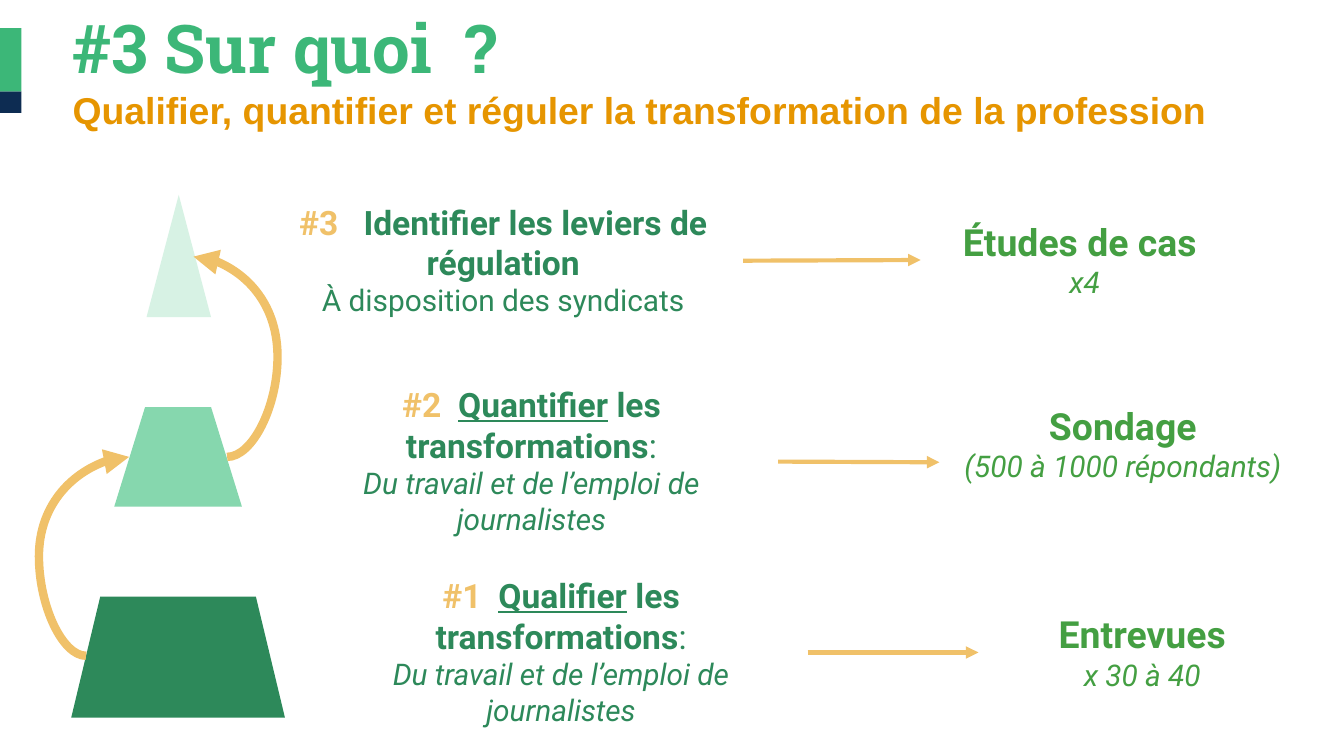
from lxml import etree
from pptx import Presentation
from pptx.dml.color import RGBColor
from pptx.enum.shapes import MSO_CONNECTOR as CONNECTOR, MSO_SHAPE as SHAPE
from pptx.enum.text import MSO_ANCHOR as ANCHOR, MSO_AUTO_SIZE as AUTO_SIZE, PP_ALIGN as ALIGN
from pptx.oxml.ns import qn
from pptx.util import Inches, Pt

COLORS = {
    "navy": "0D2C52", "green": "3CB778", "pale": "D7F2E4", "mint": "86D7AE",
    "forest": "2D895A", "leaf": "449F42", "sand": "F0C169", "orange": "E69500",
}


def add_run(paragraph, text, color, size, font="Roboto", **formats):
    run = paragraph.add_run()
    run.text = text
    run.font.color.rgb = RGBColor.from_string(COLORS[color])
    for name, value in {"name": font, "size": Pt(size), **formats}.items():
        setattr(run.font, name, value)


def style_arrow(connector, width):
    connector.line.color.rgb = RGBColor.from_string(COLORS["sand"])
    connector.line.width = Pt(width)
    line = connector.line._get_or_add_ln()
    etree.SubElement(line, qn("a:tailEnd"), type="triangle")
    etree.SubElement(connector._element.spPr, qn("a:effectLst"))


# Widescreen 16:9 slide
presentation = Presentation()
presentation.slide_width = Inches(10)
presentation.slide_height = Inches(10) * 9 // 16
slide = presentation.slides.add_slide(presentation.slide_layouts[5])
shapes = slide.shapes

# Title and subtitle
title = shapes.title
title.left, title.top, title.width, title.height = [Inches(v) for v in (0.44, 0.08, 8.95, 0.87)]
title_format = {"word_wrap": True, "auto_size": AUTO_SIZE.NONE, "vertical_anchor": ANCHOR.MIDDLE}
for name, value in title_format.items():
    setattr(title.text_frame, name, value)
paragraph = title.text_frame.paragraphs[0]
paragraph.alignment = ALIGN.LEFT
add_run(paragraph, "#3 Sur quoi  ? ", "green", 36, "Roboto Slab", bold=True)
paragraph.add_line_break()
add_run(paragraph, "Qualifier, quantifier et réguler la transformation de la profession",
        "orange", 20, "Arial", bold=True)

# Edge marks and pyramid levels
blocks = [
    (SHAPE.RECTANGLE, (0, 0.68, 0.16, 0.16), "navy", None),
    (SHAPE.RECTANGLE, (0, 0.21, 0.16, 0.47), "green", None),
    (SHAPE.TRAPEZOID, (1.09, 1.45, 0.48, 0.91), "pale", 0.92),
    (SHAPE.TRAPEZOID, (0.85, 3.03, 0.95, 0.74), "mint", 0.31),
    (SHAPE.TRAPEZOID, (0.53, 4.44, 1.59, 0.9), "forest", 0.24),
]
for kind, place, color, slant in blocks:
    block = shapes.add_shape(kind, *[Inches(v) for v in place])
    block.shadow.inherit = False
    block.fill.solid()
    block.fill.fore_color.rgb = RGBColor.from_string(COLORS[color])
    block.line.fill.background()
    if slant:
        block.adjustments[0] = slant

# Curved arrows climbing from level to level
for x1, y1, x2, y2, bend in [(0.64, 4.88, 0.96, 3.4, -109500), (1.69, 3.4, 1.44, 1.91, -150200)]:
    curve = shapes.add_connector(CONNECTOR.CURVE, *[Inches(v) for v in (x1, y1, x2, y2)])
    guides = curve._element.spPr.find(qn("a:prstGeom")).get_or_add_avLst()
    etree.SubElement(guides, qn("a:gd"), name="adj1", fmla=f"val {bend}")
    style_arrow(curve, 4.5)

# Each row: goal box, method box and the arrow between them
work = "Du travail et de l’emploi de journalistes"
rows = [
    ((1.96, 1.45, 3.57, 0.98), "#3   ", "", "Identifier les leviers de régulation", "",
     "À disposition des syndicats", False,
     (6.85, 1.58, 2.44, 0.71), "Études de cas ", "x4"),
    ((2.12, 2.81, 3.67, 1.25), "#2  ", "Quantifier", " les transformations", ":", work, True,
     (6.99, 2.95, 2.73, 0.98), "Sondage", "(500 à 1000 répondants)"),
    ((2.34, 4.23, 3.67, 1.25), "#1  ", "Qualifier", " les transformations", ":", work, True,
     (7.28, 4.5, 2.44, 0.71), "Entrevues", "x 30 à 40"),
]
for goal_place, number, verb, goal, colon, detail, italic, method_place, method, count in rows:
    goal_lines = [
        [(number, "sand", 18, {"bold": True}),
         (verb, "forest", 18, {"bold": True, "underline": True}),
         (goal, "forest", 18, {"bold": True}),
         (colon, "forest", 18, {})],
        [(detail, "forest", 16, {"italic": italic})],
    ]
    method_lines = [
        [(method, "leaf", 20, {"bold": True})],
        [(count, "leaf", 16, {"italic": True})],
    ]
    boxes = []
    for place, lines in [(goal_place, goal_lines), (method_place, method_lines)]:
        box = shapes.add_shape(SHAPE.ROUNDED_RECTANGLE, *[Inches(v) for v in place])
        box.adjustments[0] = 0
        box.shadow.inherit = False
        box.fill.background()
        box.line.fill.background()
        frame = box.text_frame
        frame.word_wrap = True
        frame.auto_size = AUTO_SIZE.SHAPE_TO_FIT_TEXT
        frame.vertical_anchor = ANCHOR.TOP
        for index, line in enumerate(lines):
            paragraph = frame.add_paragraph() if index else frame.paragraphs[0]
            paragraph.alignment = ALIGN.CENTER
            for text, color, size, formats in line:
                if text:
                    add_run(paragraph, text, color, size, **formats)
        boxes.append(box)
    arrow = shapes.add_connector(CONNECTOR.STRAIGHT, 0, 0, 0, 0)
    arrow.begin_connect(boxes[0], 3)
    arrow.end_connect(boxes[1], 1)
    style_arrow(arrow, 2.25)

presentation.save("out.pptx")
